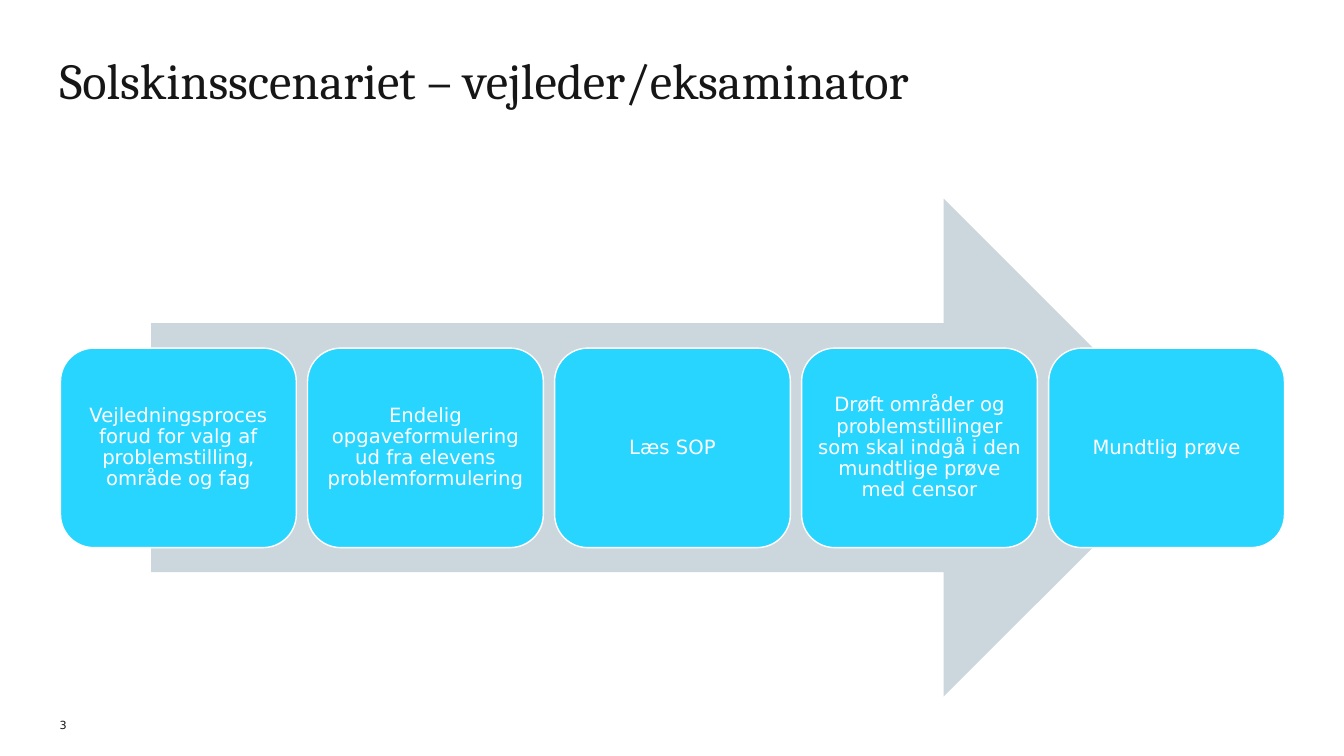
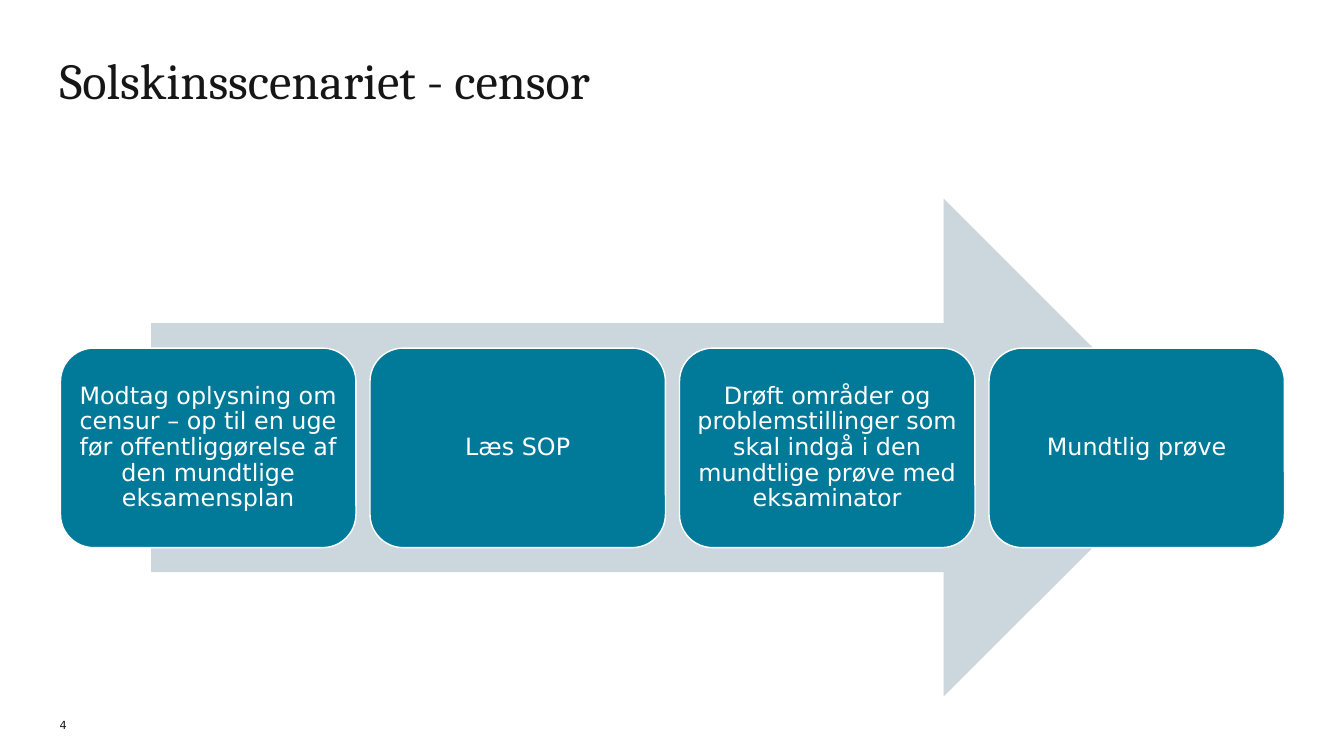
from dataclasses import dataclass

from pptx import Presentation
from pptx.dml.color import RGBColor
from pptx.enum.shapes import MSO_SHAPE
from pptx.enum.text import MSO_ANCHOR, MSO_AUTO_SIZE, PP_ALIGN
from pptx.shapes.autoshape import Shape
from pptx.slide import Slide
from pptx.util import Inches, Pt

ARROW, ROUNDED = MSO_SHAPE.RIGHT_ARROW, MSO_SHAPE.ROUNDED_RECTANGLE
TOP, MIDDLE, BOTTOM = MSO_ANCHOR.TOP, MSO_ANCHOR.MIDDLE, MSO_ANCHOR.BOTTOM
LEFT, CENTER = PP_ALIGN.LEFT, PP_ALIGN.CENTER
NO_FIT = MSO_AUTO_SIZE.NONE

SLIDE_WIDTH, SLIDE_HEIGHT = Inches(13.33), Inches(7.5)
TITLE_ONLY = 5
SERIF, SANS = "Cambria", "DejaVu Sans"
INK, WHITE, ARROW_GREY = "161616", "FFFFFF", "CCD7DD"
CYAN, TEAL = "28D5FF", "007A98"
GAP_PER_STEP = 1 / 21


@dataclass(frozen=True)
class Area:
    """Position and size in percent of the slide."""
    left: float
    top: float
    width: float
    height: float


@dataclass(frozen=True)
class TextStyle:
    font: str
    size: float
    color: str
    align: PP_ALIGN = LEFT
    anchor: MSO_ANCHOR = TOP
    line_spacing: float = 1.0
    inset: float = 0


@dataclass(frozen=True)
class Process:
    title: str
    number: int
    color: str
    text_size: float
    inset: float
    steps: tuple[str, ...]


TITLE_AREA = Area(4.43, 7.87, 76, 13.6)
ARROW_AREA = Area(11.25, 26.27, 77.5, 65.87)
STEPS_AREA = Area(4.5, 46.04, 91.07, 26.4)
NUMBER_AREA = Area(4.43, 94.13, 2.25, 2.67)

TITLE_STYLE = TextStyle(SERIF, 36, INK, line_spacing=0.83)
NUMBER_STYLE = TextStyle(SANS, 8, INK, anchor=BOTTOM)

PROCESSES = (
    Process(
        "Solskinsscenariet – vejleder/eksaminator", 3, CYAN, 14, 0.06,
        (
            "Vejledningsproces forud for valg af problemstilling, område og fag",
            "Endelig opgaveformulering ud fra elevens problemformulering",
            "Læs SOP",
            "Drøft områder og problemstillinger som skal indgå i den mundtlige prøve med censor",
            "Mundtlig prøve",
        ),
    ),
    Process(
        "Solskinsscenariet - censor", 4, TEAL, 17, 0.07,
        (
            "Modtag oplysning om censur – op til en uge før offentliggørelse af den mundtlige eksamensplan",
            "Læs SOP",
            "Drøft områder og problemstillinger som skal indgå i den mundtlige prøve med eksaminator",
            "Mundtlig prøve",
        ),
    ),
)


def rgb(color: str) -> RGBColor:
    return RGBColor.from_string(color)


def place(area: Area) -> dict[str, int]:
    return {
        "left": round(SLIDE_WIDTH * area.left / 100),
        "top": round(SLIDE_HEIGHT * area.top / 100),
        "width": round(SLIDE_WIDTH * area.width / 100),
        "height": round(SLIDE_HEIGHT * area.height / 100),
    }


def set_all(target: object, values: dict[str, object]) -> None:
    for name, value in values.items():
        setattr(target, name, value)


def write(box: Shape, text: str, style: TextStyle) -> None:
    frame = box.text_frame
    inset = Inches(style.inset)
    set_all(frame, {
        "text": text, "word_wrap": True, "auto_size": NO_FIT,
        "vertical_anchor": style.anchor,
        "margin_left": inset, "margin_right": inset,
        "margin_top": inset, "margin_bottom": inset,
    })
    para = frame.paragraphs[0]
    set_all(para, {
        "alignment": style.align, "line_spacing": style.line_spacing,
        "space_before": Pt(0),
    })
    span = para.runs[0]
    set_all(span.font, {"name": style.font, "size": Pt(style.size)})
    span.font.color.rgb = rgb(style.color)


def add_shape(page: Slide, kind: MSO_SHAPE, area: Area, fill: str, line: str | None = None) -> Shape:
    shape = page.shapes.add_shape(kind, **place(area))
    shape.shadow.inherit = False
    shape.fill.solid()
    shape.fill.fore_color.rgb = rgb(fill)
    if line:
        shape.line.color.rgb = rgb(line)
        shape.line.width = Pt(1)
    else:
        shape.line.fill.background()
    return shape


def add_steps(page: Slide, process: Process) -> None:
    count = len(process.steps)
    width = STEPS_AREA.width / (count + (count - 1) * GAP_PER_STEP)
    pitch = width * (1 + GAP_PER_STEP)
    style = TextStyle(SANS, process.text_size, WHITE, CENTER, MIDDLE, 0.9, process.inset)
    for index, text in enumerate(process.steps):
        area = Area(STEPS_AREA.left + index * pitch, STEPS_AREA.top, width, STEPS_AREA.height)
        write(add_shape(page, ROUNDED, area, process.color, WHITE), text, style)


def add_process_page(deck: Presentation, process: Process) -> None:
    page = deck.slides.add_slide(deck.slide_layouts[TITLE_ONLY])
    title = page.shapes.title
    set_all(title, place(TITLE_AREA))
    write(title, process.title, TITLE_STYLE)
    add_shape(page, ARROW, ARROW_AREA, ARROW_GREY)
    add_steps(page, process)
    number_box = page.shapes.add_textbox(**place(NUMBER_AREA))
    write(number_box, str(process.number), NUMBER_STYLE)


def main() -> None:
    deck = Presentation()
    set_all(deck, {"slide_width": SLIDE_WIDTH, "slide_height": SLIDE_HEIGHT})
    for process in PROCESSES:
        add_process_page(deck, process)
    deck.save("out.pptx")


if __name__ == "__main__":
    main()
